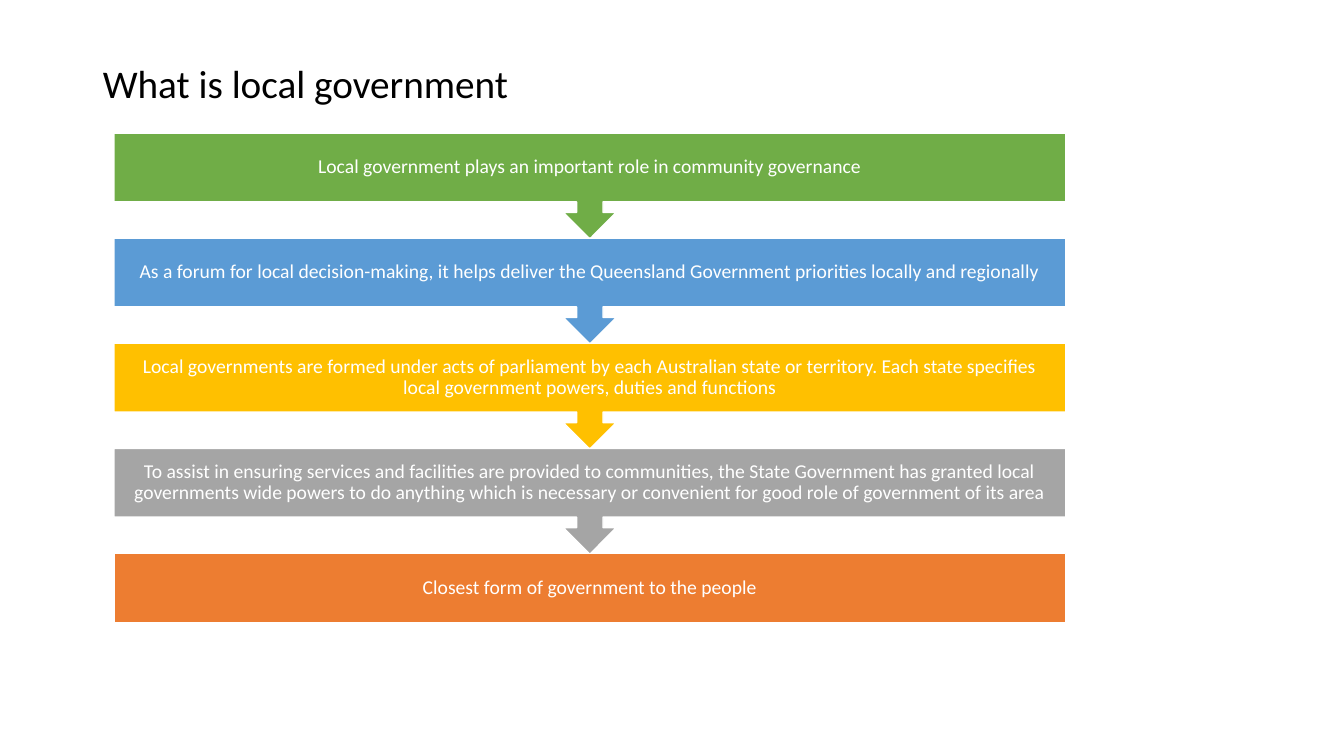
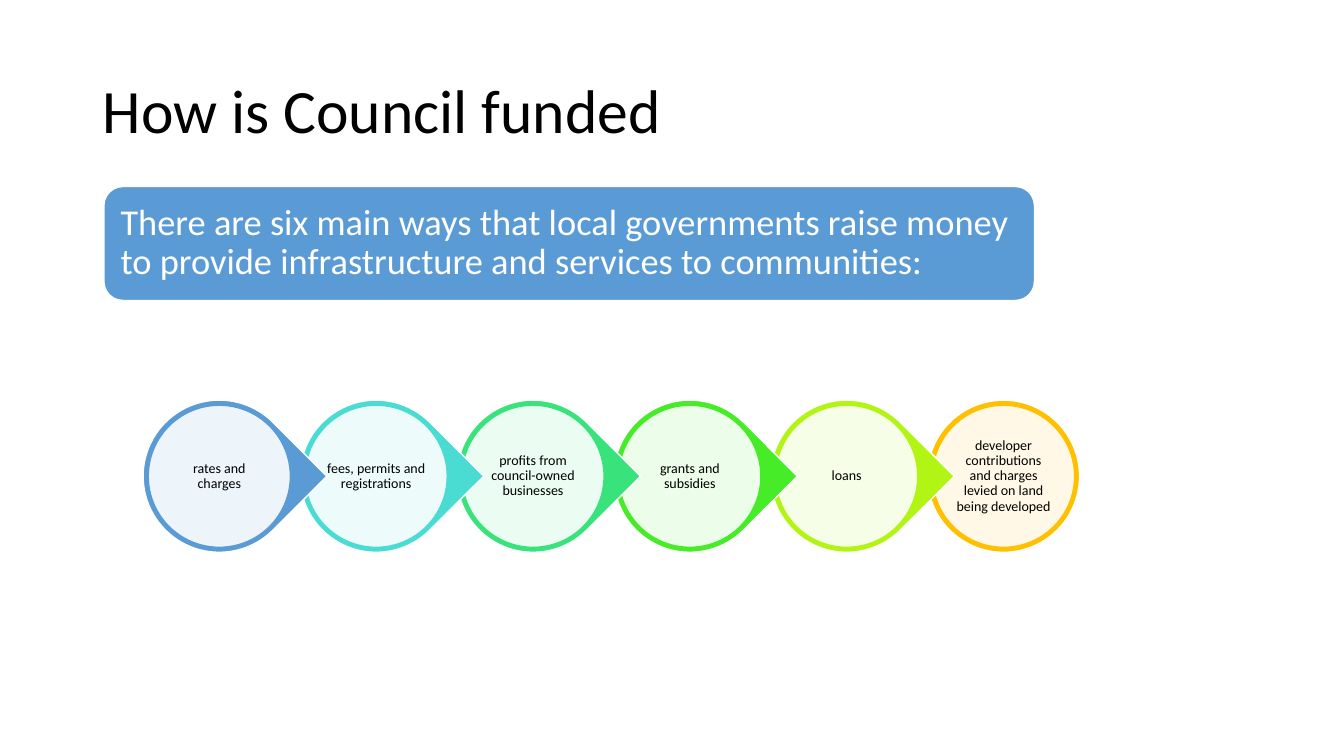
from lxml.etree import SubElement
from pptx import Presentation
from pptx.dml.color import RGBColor
from pptx.enum.shapes import MSO_SHAPE as SHAPE
from pptx.enum.text import MSO_ANCHOR as ANCHOR, MSO_AUTO_SIZE as AUTO, PP_ALIGN as ALIGN
from pptx.oxml.ns import qn
from pptx.util import Inches, Pt

rgb = RGBColor.from_string
WHITE, BLACK, BLUE, GOLD = "FFFFFF", "000000", "5B9BD5", "FFC000"

deck = Presentation()
deck.slide_width, deck.slide_height = Inches(13.33), Inches(7.5)
# The grid: 100 columns by 100 rows
COL, ROW = deck.slide_width / 100, deck.slide_height / 100
title_only = deck.slide_layouts[5]


def write(shape, text, size, colour, align, anchor=ANCHOR.MIDDLE, inset=0.1):
    """Fill the shape with one paragraph in the deck's text style."""
    frame = shape.text_frame
    frame.text = text
    margins = {f"margin_{side}": Inches(inset) for side in ("left", "right")}
    margins |= {f"margin_{side}": Inches(inset / 2 if shape.is_placeholder else inset)
                for side in ("top", "bottom")}
    paragraph = frame.paragraphs[0]
    formats = (
        (frame, {"word_wrap": True, "auto_size": AUTO.NONE, "vertical_anchor": anchor} | margins),
        (paragraph, {"alignment": align, "line_spacing": 0.9}),
        (paragraph.font, {"name": "Calibri", "size": Pt(size)}),
    )
    for target, values in formats:
        for name, value in values.items():
            setattr(target, name, value)
    paragraph.font.color.rgb = rgb(colour)


def draw(slide, kind, left, top, width, height, fill, line=WHITE):
    """Add a filled, outlined shape; lengths are grid columns and rows."""
    shape = slide.shapes.add_shape(
        kind, round(left * COL), round(top * ROW), round(width * COL), round(height * ROW))
    shape.shadow.inherit = False
    shape.fill.solid()
    shape.fill.fore_color.rgb = rgb(fill)
    shape.line.color.rgb = rgb(line)
    shape.line.width = Pt(1)
    return shape


# Titles
titles = [
    ("What is local government", 28, ANCHOR.TOP, 7.87, 9),
    ("How is Council funded", 44, ANCHOR.MIDDLE, 5.33, 19.33),
]
for words, size, anchor, top, height in titles:
    title = deck.slides.add_slide(title_only).shapes.title
    title.left, title.width = round(6.9 * COL), round(86.27 * COL)
    title.top, title.height = round(top * ROW), round(height * ROW)
    write(title, words, size, BLACK, ALIGN.LEFT, anchor)
role_slide, funding_slide = deck.slides

# Role of local government: a chain of callouts ending in a plain box
roles = [
    ("Local government plays an important role in community governance", "70AD47"),
    ("As a forum for local decision-making, it helps deliver the Queensland Government "
     "priorities locally and regionally", BLUE),
    ("Local governments are formed under acts of parliament by each Australian state or "
     "territory. Each state specifies local government powers, duties and functions", GOLD),
    ("To assist in ensuring services and facilities are provided to communities, the State "
     "Government has granted local governments wide powers to do anything which is necessary "
     "or convenient for good role of government of its area", "A5A5A5"),
    ("Closest form of government to the people", "ED7D31"),
]
for row, (role, colour) in enumerate(roles):
    last = row == len(roles) - 1
    kind, height = (SHAPE.RECTANGLE, 9.2) if last else (SHAPE.DOWN_ARROW_CALLOUT, 14)
    step = draw(role_slide, kind, 8.48, 17.6 + row * 13.9, 70.82, height, colour)
    write(step, role, 14, WHITE, ALIGN.CENTER, inset=0.11)

# Funding: introduction banner
banner = draw(funding_slide, SHAPE.ROUNDED_RECTANGLE, 7.73, 24.67, 69.24, 15.07, BLUE)
write(banner, "There are six main ways that local governments raise money to provide "
      "infrastructure and services to communities:", 26, WHITE, ALIGN.LEFT, inset=0.11)

# Funding sources, drawn from the right so that each point covers the next ring
sources = [
    ("rates and charges", BLUE),
    ("fees, permits and registrations", "4ADCD2"),
    ("profits from council-owned businesses", "39E37B"),
    ("grants and subsidies", "46EC27"),
    ("loans", "B2F514"),
    ("developer contributions and charges levied on land being developed", GOLD),
]
for place, (source, colour) in reversed(list(enumerate(sources))):
    last = place == len(sources) - 1
    left, top = 10.65 + place * 11.67, 52.93
    ring = draw(funding_slide, SHAPE.OVAL if last else SHAPE.TEAR, left, top, 11.33, 20.13, colour)
    ring.rotation = 0 if last else 45
    disc = draw(funding_slide, SHAPE.OVAL, left + 0.38, top + 0.67, 10.58, 18.8, WHITE, colour)
    disc_fill = disc.element.spPr.find(qn("a:solidFill")).find(qn("a:srgbClr"))
    SubElement(disc_fill, qn("a:alpha"), val="90000")
    write(disc, source, 10, BLACK, ALIGN.CENTER, inset=0.01)

deck.save("out.pptx")
